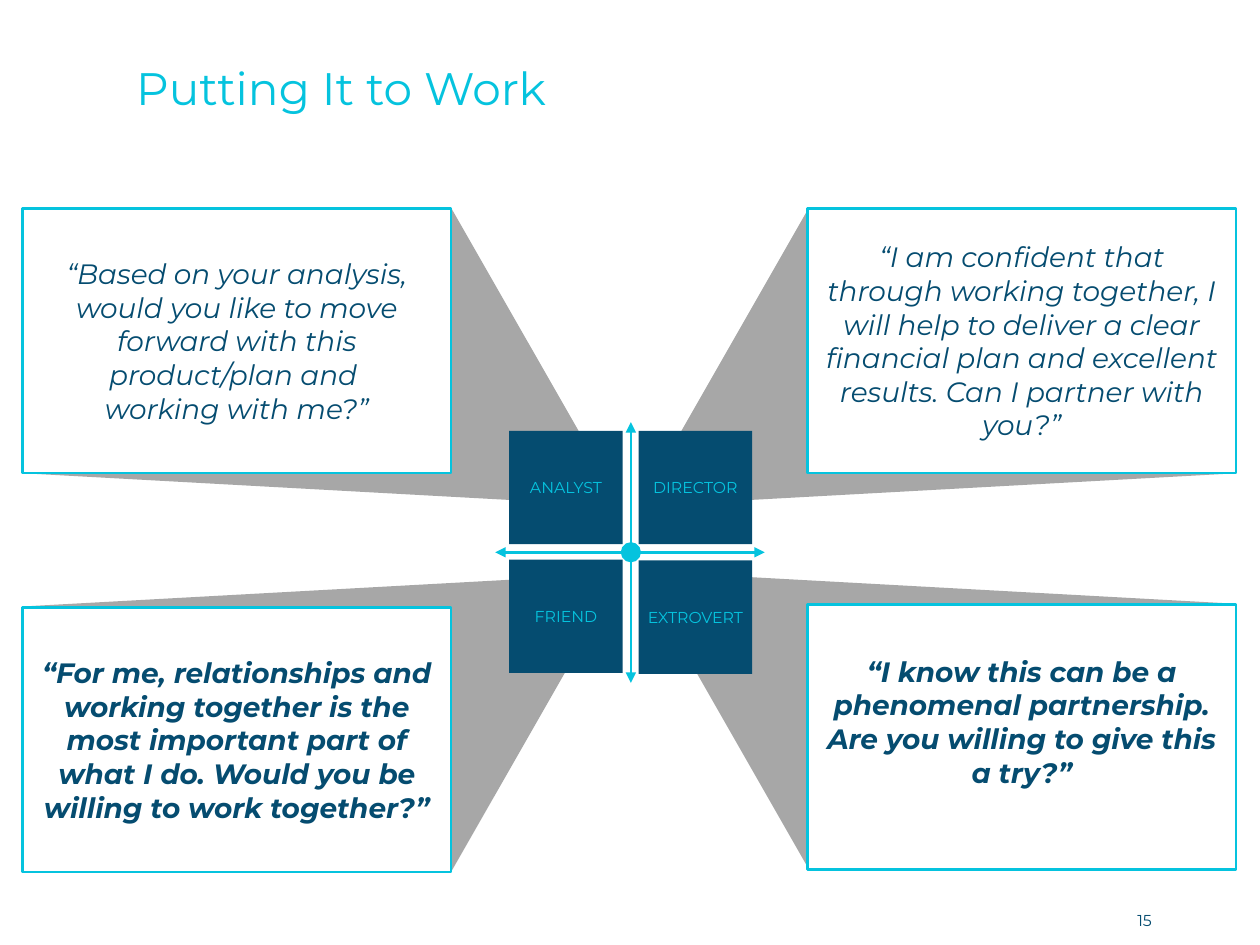
import pptx
import pptx.util
import pptx.dml.color
import pptx.enum.shapes
import pptx.enum.text
import pptx.oxml
import pptx.oxml.ns
from lxml import etree

Pt = pptx.util.Pt
KIND = pptx.enum.shapes.MSO_SHAPE
ALIGN = pptx.enum.text.PP_ALIGN
MIDDLE = pptx.enum.text.MSO_ANCHOR.MIDDLE

CYAN, NAVY, GREY = "05C3DE", "054C70", "A7A7A7"
FONT = "Montserrat"
TITLE, PAGE = "Putting It to Work", "15"

# name, tile top, side (-1 left, 1 right), half (-1 upper, 1 lower),
# quote top, bottom inset, bold, quote lines
STYLES = [
    ("ANALYST", 246.2, -1, -1, 119, 7.2, False,
     ["“Based on your analysis, would you like to move forward with this "
      "product/plan and ", "working with me?”"]),
    ("FRIEND", 319.8, -1, 1, 347, 7.2, True,
     ["“For me, relationships and working together is the most important "
      "part of what I do. Would you be willing to work together?”"]),
    ("DIRECTOR", 246.2, 1, -1, 119, 7.2, False,
     ["“I am confident that through working together, I will help to deliver "
      "a clear financial plan and excellent results. Can I partner with you?”"]),
    ("EXTROVERT", 320.3, 1, 1, 345.5, 25, True,
     ["“I know this can be a phenomenal partnership. Are you willing to give "
      "this a try?”"]),
]
TILE, TILE_X = 64.8, {-1: 291, 1: 365}
BOX_W, BOX_H, BOX_X = 244.8, 151.4, {-1: 13, 1: 461.5}
MID = 360
# Wedge corners: distance from the slide's middle, and from the quote's inner edge
WEDGE = [(342, 0), (67, -15.1), (18.7, 5.8), (102.2, 151.9), (102.2, 0)]
# Arrows start at the hub and point outwards
HUB_X, HUB_Y, HUB = 360.5, 315.6, 10
ARROWS = [(360.5, 241.2), (283, 315.6), (360.5, 390.2), (437, 315.6)]


def color(text):
    return pptx.dml.color.RGBColor.from_string(text)


def write(shape, lines, size, tint, align, bold=False, italic=False):
    para = shape.text_frame.paragraphs[0]
    para.alignment = align
    for i, line in enumerate(lines):
        if i:
            para.add_line_break()
        run = para.add_run()
        run.text = line
        font = run.font
        font.name, font.size = FONT, Pt(size)
        font.bold, font.italic = bold, italic
        font.color.rgb = color(tint)
    return para


def inset(shape, side, bottom):
    frame = shape.text_frame
    frame.margin_left = frame.margin_right = frame.margin_top = Pt(side)
    frame.margin_bottom = Pt(bottom)


def paint(shape, fill=None, line=None):
    shape.shadow.inherit = False
    if fill:
        shape.fill.solid()
        shape.fill.fore_color.rgb = color(fill)
    else:
        shape.fill.background()
    if line:
        shape.line.color.rgb = color(line)
        shape.line.width = Pt(1.5)
    else:
        shape.line.fill.background()


def block(kind, x, y, w, h, fill=None, line=None):
    shape = slide.shapes.add_shape(kind, Pt(x), Pt(y), Pt(w), Pt(h))
    paint(shape, fill, line)
    shape.text_frame.vertical_anchor = MIDDLE
    return shape


def label(x, y, w, h):
    shape = slide.shapes.add_textbox(Pt(x), Pt(y), Pt(w), Pt(h))
    shape.text_frame.word_wrap = True
    inset(shape, 0, 0)
    return shape


def wedge(side, half, top):
    edge = top - 0.7 if half > 0 else top + BOX_H + 0.3
    spots = [(Pt(MID + side * dx), Pt(edge + half * dy)) for dx, dy in WEDGE]
    path = slide.shapes.build_freeform(*spots[0], scale=1.0)
    path.add_line_segments(spots[1:], close=True)
    paint(path.convert_to_shape(), GREY)


def arrow(x, y):
    line = slide.shapes.add_connector(
        pptx.enum.shapes.MSO_CONNECTOR.STRAIGHT,
        Pt(HUB_X), Pt(HUB_Y), Pt(x), Pt(y))
    line.line.color.rgb = color(CYAN)
    line.line.width = Pt(1.5)
    tag = pptx.oxml.ns.qn
    etree.SubElement(line.line._get_or_add_ln(), tag("a:tailEnd"), type="triangle")
    etree.SubElement(line._element.spPr, tag("a:effectLst"))


deck = pptx.Presentation()
deck.slide_width, deck.slide_height = Pt(720), Pt(540)
slide = deck.slides.add_slide(deck.slide_layouts[6])

write(label(642.2, 520.6, 23.8, 10.8), [PAGE], 9, NAVY, ALIGN.CENTER)
title = label(77.8, 23, 588, 58.3)
title.text_frame.vertical_anchor = MIDDLE
write(title, [TITLE], 26, CYAN, ALIGN.LEFT).line_spacing = 0.85

for name, y, side, half, top, low, bold, lines in STYLES:
    wedge(side, half, top)

for name, y, side, half, top, low, bold, lines in STYLES:
    tile = block(KIND.RECTANGLE, TILE_X[side], y, TILE, TILE, NAVY)
    tile.text_frame.word_wrap = False
    write(tile, [name], 9, CYAN, ALIGN.CENTER)
    quote = block(KIND.RECTANGLE, BOX_X[side], top, BOX_W, BOX_H, line=CYAN)
    quote.text_frame.word_wrap = True
    inset(quote, 7.2, low)
    write(quote, lines, 16, NAVY, ALIGN.CENTER, bold, True)

block(KIND.OVAL, HUB_X - HUB / 2, HUB_Y - HUB / 2, HUB, HUB, CYAN, CYAN)
for x, y in ARROWS:
    arrow(x, y)

deck.save("out.pptx")
